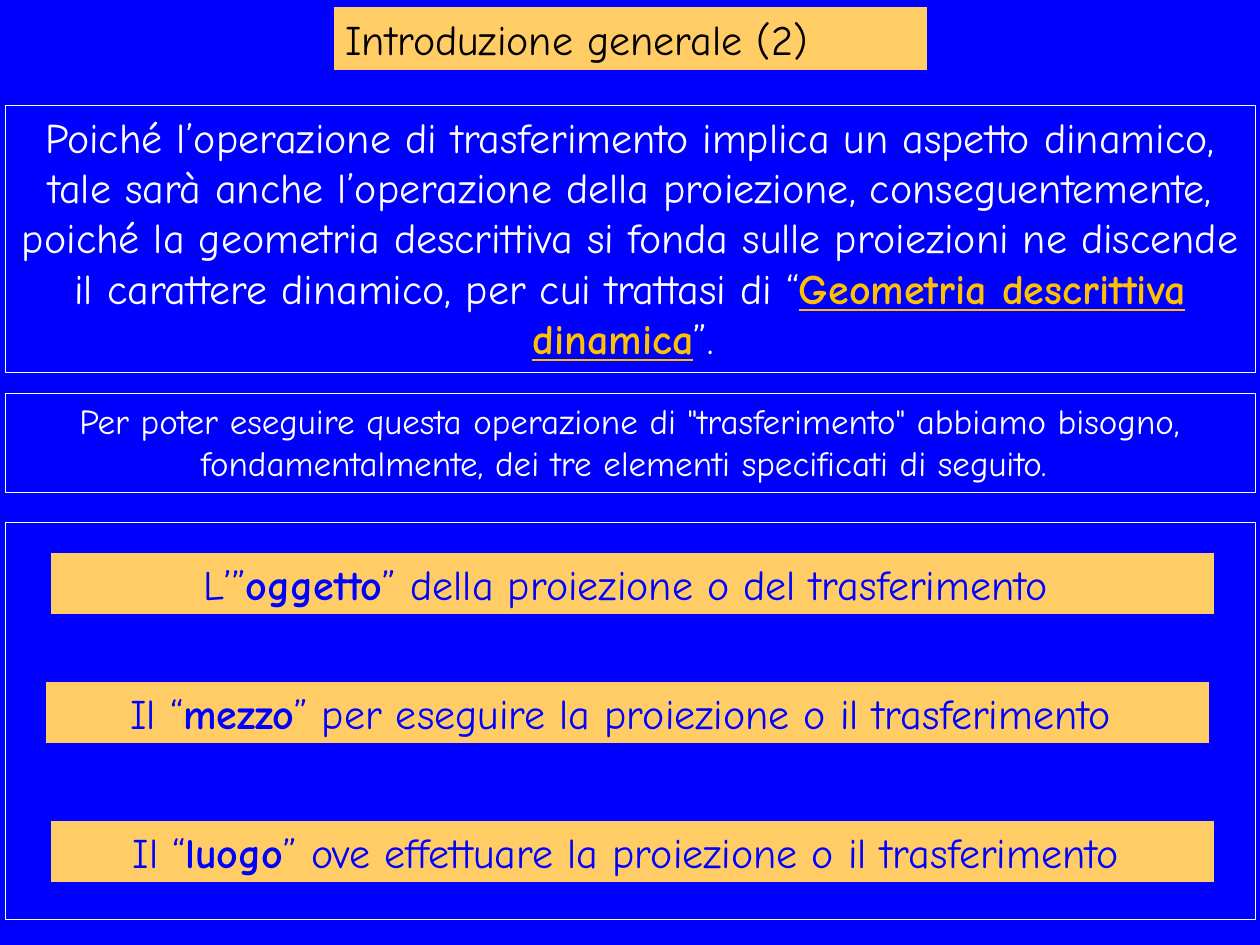
import pptx
import pptx.dml.color
import pptx.enum.shapes
import pptx.enum.text
import pptx.util

PX = 914400 / 126
FONT = "Comic Neue"
COLORS = {
    "blue": "0000FF",
    "sand": "FFCC66",
    "gold": "FFC000",
    "white": "FFFFFF",
    "black": "000000",
}


def px(count):
    return pptx.util.Emu(round(count * PX))


def color(name):
    return pptx.dml.color.RGBColor.from_string(COLORS[name])


def add_box(slide, box, line, width, fill=None):
    """Draw a rectangle at box = (left, top, width, height) in px."""
    shape = slide.shapes.add_shape(
        pptx.enum.shapes.MSO_SHAPE.RECTANGLE, *map(px, box))
    shape.shadow.inherit = False
    if fill:
        shape.fill.solid()
        shape.fill.fore_color.rgb = color(fill)
    else:
        shape.fill.background()
    shape.line.color.rgb = color(line)
    shape.line.width = pptx.util.Pt(width)
    return shape


def write(shape, parts, ink, size=24, center=True, middle=False, mark=None):
    """Write parts as runs; every second part is bold, and underlined in mark if given."""
    frame = shape.text_frame
    frame.word_wrap = True
    anchor = pptx.enum.text.MSO_ANCHOR
    frame.vertical_anchor = anchor.MIDDLE if middle else anchor.TOP
    para = frame.paragraphs[0]
    align = pptx.enum.text.PP_ALIGN
    para.alignment = align.CENTER if center else align.LEFT
    for index, part in enumerate(parts):
        strong = index % 2 == 1
        run = para.add_run()
        run.text = part
        run.font.name = FONT
        run.font.size = pptx.util.Pt(size)
        run.font.bold = strong
        run.font.underline = strong and mark is not None
        run.font.color.rgb = color(mark if strong and mark else ink)


def add_title(slide, box):
    shape = add_box(slide, box, "blue", 0.75, "sand")
    write(shape, ["Introduzione generale (2)"], "black", center=False, middle=True)


def add_panel(slide, box, parts, size, mark=None):
    shape = add_box(slide, box, "white", 0.25)
    write(shape, parts, "white", size, mark=mark)


def add_items(slide, box, items):
    """Frame a list of bars, each given as (left, top, parts) within the box."""
    left, top, width, height = box
    for dx, dy, parts in items:
        bar = add_box(slide, (left + dx, top + dy, 1165, 63), "blue", 0.75, "sand")
        write(bar, parts, "blue")
    add_box(slide, box, "white", 0.25)


def main():
    deck = pptx.Presentation()
    deck.slide_width, deck.slide_height = px(1260), px(945)
    slide = deck.slides.add_slide(deck.slide_layouts[6])
    slide.background.fill.solid()
    slide.background.fill.fore_color.rgb = color("blue")

    add_title(slide, (333, 6, 595, 65))
    add_panel(slide, (5, 105, 1250, 267), [
        "Poiché l’operazione di trasferimento implica un aspetto dinamico, "
        "tale sarà anche l’operazione della proiezione, conseguentemente, "
        "poiché la geometria descrittiva si fonda sulle proiezioni ne discende "
        "il carattere dinamico, per cui trattasi di “",
        "Geometria descrittiva dinamica",
        "”. ",
    ], 24, "gold")
    add_panel(slide, (5, 393, 1250, 99), [
        "Per poter eseguire questa operazione di \"trasferimento\" abbiamo bisogno, "
        "fondamentalmente, dei tre elementi specificati di seguito. ",
    ], 20)
    add_items(slide, (5, 522, 1250, 397), [
        (45, 30, ["L’”", "oggetto", "” della proiezione o del trasferimento "]),
        (40, 159, ["Il “", "mezzo", "” per eseguire la proiezione o il trasferimento "]),
        (45, 298, ["Il “", "luogo", "” ove effettuare la proiezione o il trasferimento "]),
    ])
    deck.save("out.pptx")


if __name__ == "__main__":
    main()
